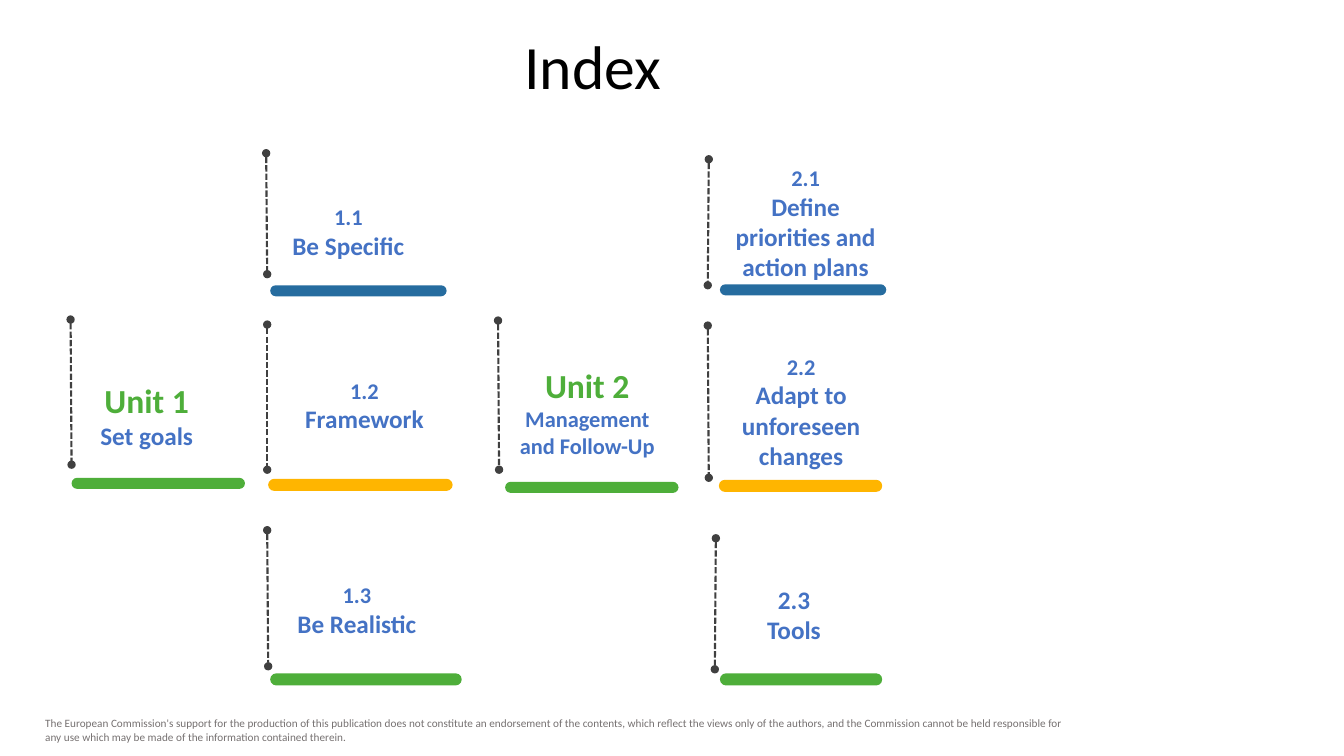
from dataclasses import dataclass

from lxml.etree import SubElement
from pptx import Presentation
from pptx.dml.color import RGBColor
from pptx.enum.dml import MSO_LINE
from pptx.enum.shapes import MSO_CONNECTOR, MSO_SHAPE
from pptx.enum.text import MSO_ANCHOR, PP_ALIGN
from pptx.oxml.ns import qn
from pptx.slide import Slide
from pptx.util import Emu, Pt

EMU_PER_PX = 9144
FONT = "Calibri"
GREEN, BLUE, AMBER = "4EAE3A", "266C9F", "FFB500"
LABEL, DASH, BLACK, GRAY = "4472C4", "404040", "000000", "767171"
DISCLAIMER = (
    "The European Commission's support for the production of this publication "
    "does not constitute an endorsement of the contents, which reflect the views "
    "only of the authors, and the Commission cannot be held responsible for any "
    "use which may be made of the information contained therein."
)

Box = tuple[int, int, int, int]


@dataclass(frozen=True)
class Line:
    """One paragraph of text with its size and colour."""
    text: str
    size: int
    color: str = LABEL


@dataclass(frozen=True)
class Entry:
    """An index entry: dashed rule, label and coloured bar."""
    rule: Box
    bar: Box
    bar_color: str
    label: Box
    lines: tuple[Line, ...]
    inset: int = 12


ENTRIES = (
    Entry((70, 317, 71, 461), (71, 474, 172, 11), GREEN, (70, 372, 151, 81),
          (Line("Unit 1", 24, GREEN), Line("Set goals", 18))),
    Entry((264, 152, 265, 272), (268, 283, 175, 11), BLUE, (265, 197, 161, 67),
          (Line("1.1", 16), Line("Be Specific", 18))),
    Entry((265, 322, 265, 466), (266, 475, 183, 12), AMBER, (281, 369, 161, 67),
          (Line("1.2", 16), Line("Framework", 18))),
    Entry((265, 526, 266, 661), (268, 668, 190, 12), GREEN, (280, 572, 148, 67),
          (Line("1.3", 16), Line("Be Realistic", 18))),
    Entry((494, 318, 495, 466), (501, 478, 172, 11), GREEN, (502, 357, 161, 104),
          (Line("Unit 2", 24, GREEN), Line("Management and Follow-Up", 16))),
    Entry((703, 158, 702, 283), (714, 282, 165, 11), BLUE, (713, 158, 172, 128),
          (Line("2.1", 16), Line("Define priorities and action plans", 18)), 10),
    Entry((702, 323, 703, 474), (713, 476, 162, 12), AMBER, (714, 345, 161, 128),
          (Line("2.2", 16), Line("Adapt to unforeseen changes", 18))),
    Entry((710, 534, 709, 664), (714, 668, 161, 12), GREEN, (710, 575, 155, 94),
          (Line("2.3", 18), Line("Tools", 18)), 10),
)


def px(length: int) -> Emu:
    """Turn px into EMU."""
    return Emu(length * EMU_PER_PX)


def rgb(color: str) -> RGBColor:
    """Turn a hex string into a colour."""
    return RGBColor.from_string(color)


def add_text(slide: Slide, box: Box, lines: tuple[Line, ...], *, bold: bool = False,
             align: PP_ALIGN = PP_ALIGN.CENTER, anchor: MSO_ANCHOR = MSO_ANCHOR.TOP,
             inset: int = 10, spacing: float = 1.0) -> None:
    """Add a wrapped text box with one paragraph per line."""
    frame = slide.shapes.add_textbox(*map(px, box)).text_frame
    frame.word_wrap = True
    frame.vertical_anchor = anchor
    frame.margin_left = frame.margin_right = px(inset)
    frame.margin_top = frame.margin_bottom = px(5)
    for index, line in enumerate(lines):
        paragraph = frame.add_paragraph() if index else frame.paragraphs[0]
        paragraph.alignment = align
        paragraph.line_spacing = spacing
        run = paragraph.add_run()
        run.text = line.text
        run.font.name = FONT
        run.font.size = Pt(line.size)
        run.font.bold = bold
        run.font.color.rgb = rgb(line.color)


def add_bar(slide: Slide, box: Box, color: str) -> None:
    """Add a fully rounded bar."""
    bar = slide.shapes.add_shape(MSO_SHAPE.ROUNDED_RECTANGLE, *map(px, box))
    bar.adjustments[0] = 0.5
    bar.shadow.inherit = False
    bar.fill.solid()
    bar.fill.fore_color.rgb = rgb(color)
    bar.line.fill.background()


def add_rule(slide: Slide, ends: Box) -> None:
    """Add a dashed line with round ends."""
    rule = slide.shapes.add_connector(MSO_CONNECTOR.STRAIGHT, *map(px, ends))
    rule.line.color.rgb = rgb(DASH)
    rule.line.width = Pt(1.5)
    rule.line.dash_style = MSO_LINE.SQUARE_DOT
    properties = rule.line._get_or_add_ln()
    for end in ("a:headEnd", "a:tailEnd"):
        SubElement(properties, qn(end), type="oval")
    SubElement(properties.getparent(), qn("a:effectLst"))


def main() -> None:
    """Build the index slide."""
    deck = Presentation()
    deck.slide_width, deck.slide_height = px(1333), px(750)
    slide = deck.slides.add_slide(deck.slide_layouts[6])
    add_text(slide, (35, 706, 1046, 37), (Line(DISCLAIMER, 8, GRAY),), align=PP_ALIGN.LEFT)
    add_text(slide, (237, 26, 702, 86), (Line("Index", 44, BLACK),),
             anchor=MSO_ANCHOR.MIDDLE, spacing=0.9)
    for entry in ENTRIES:
        add_bar(slide, entry.bar, entry.bar_color)
        add_rule(slide, entry.rule)
        add_text(slide, entry.label, entry.lines, bold=True, inset=entry.inset)
    deck.save("out.pptx")


if __name__ == "__main__":
    main()
